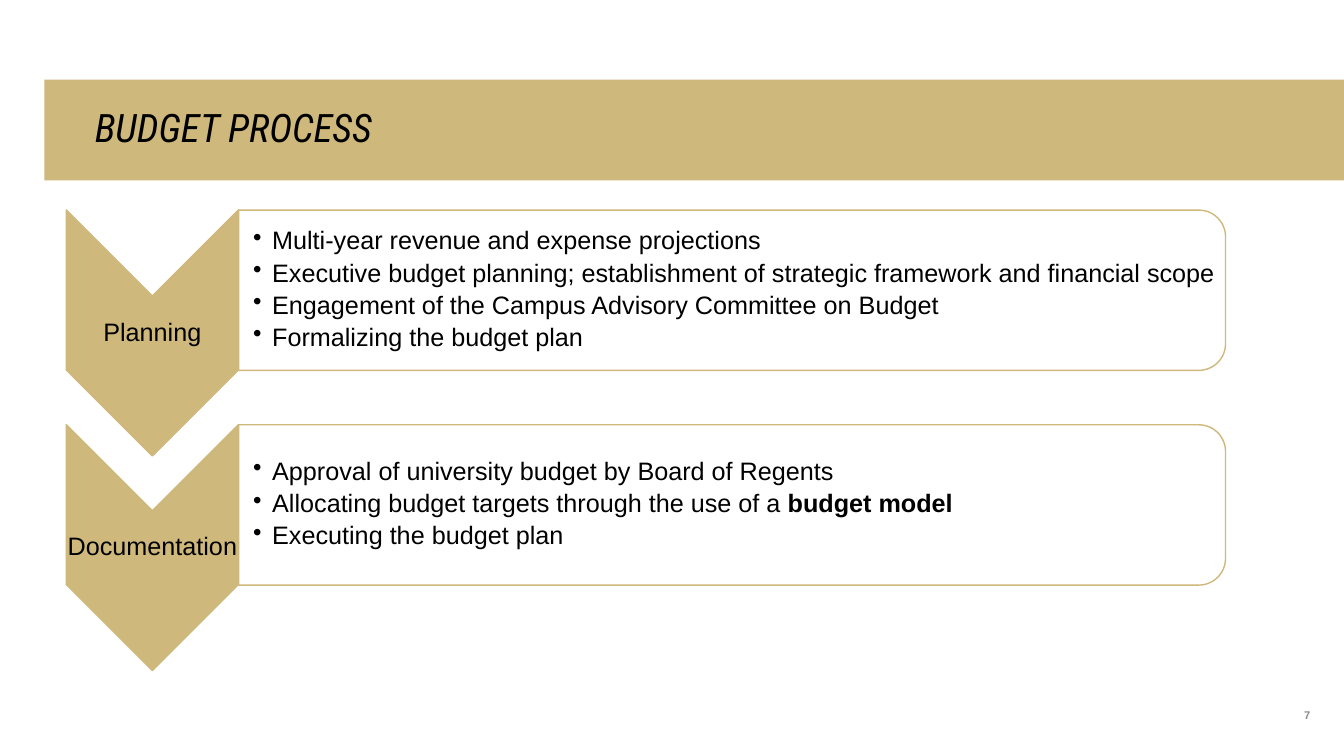
import pptx
import pptx.util
import pptx.dml.color
import pptx.enum.shapes
import pptx.enum.text
import pptx.oxml
import pptx.oxml.ns
from dataclasses import dataclass
from typing import Any
from pptx.util import Cm

Shape = pptx.enum.shapes.MSO_SHAPE
Align = pptx.enum.text.PP_ALIGN
Anchor = pptx.enum.text.MSO_ANCHOR
Color = pptx.dml.color.RGBColor
qn = pptx.oxml.ns.qn

GOLD = Color(0xCF, 0xB8, 0x7C)
WHITE = Color(0xFF, 0xFF, 0xFF)
BLACK = Color(0, 0, 0)
GRAY = Color(0x8C, 0x8C, 0x8C)
STEP = 5.41


@dataclass
class Run:
    text: str
    bold: bool = False


@dataclass
class Style:
    size: float = 18
    font: str = "Arial"
    color: Color = BLACK
    slant: bool = False


@dataclass
class Stage:
    label: str
    points: list[list[Run]]


BODY = Style()
STAGES = [
    Stage("Planning", [
        [Run("Multi-year revenue and expense projections")],
        [Run("Executive budget planning; establishment of strategic framework and financial scope")],
        [Run("Engagement of the Campus Advisory Committee on Budget")],
        [Run("Formalizing the budget plan")],
    ]),
    Stage("Documentation", [
        [Run("Approval of university budget by Board of Regents")],
        [Run("Allocating budget targets through the use of a "), Run("budget model", True)],
        [Run("Executing the budget plan")],
    ]),
]


def add_form(slide: Any, kind: Any, box: tuple, fill: Color, turn: int = 0) -> Any:
    form = slide.shapes.add_shape(kind, *map(Cm, box))
    form.shadow.inherit = False
    form.rotation = turn
    form.fill.solid()
    form.fill.fore_color.rgb = fill
    form.line.color.rgb = GOLD
    form.line.width = pptx.util.Pt(1)
    return form


def set_frame(shape: Any, pads: tuple, anchor: Any) -> Any:
    frame = shape.text_frame
    frame.word_wrap = True
    frame.vertical_anchor = anchor
    (frame.margin_left, frame.margin_top,
     frame.margin_right, frame.margin_bottom) = map(Cm, pads)
    return frame


def add_box(slide: Any, box: tuple, pads: tuple, anchor: Any = Anchor.MIDDLE) -> Any:
    return set_frame(slide.shapes.add_textbox(*map(Cm, box)), pads, anchor)


def write(para: Any, runs: list[Run], style: Style, align: Any = Align.LEFT) -> None:
    para.alignment = align
    para.line_spacing = 0.9
    for item in runs:
        run = para.add_run()
        run.text = item.text
        run.font.name = style.font
        run.font.size = pptx.util.Pt(style.size)
        run.font.color.rgb = style.color
        run.font.bold = item.bold
        run.font.italic = style.slant


def add_bullet(para: Any) -> None:
    props = para._p.get_or_add_pPr()
    props.set("marL", str(Cm(0.48)))
    props.set("indent", str(-Cm(0.48)))
    mark = props.makeelement(qn("a:buChar"), {"char": "•"})
    props.append(mark)


def fade(form: Any, share: int) -> None:
    tint = form._element.spPr.find(qn("a:solidFill"))[0]
    tint.append(tint.makeelement(qn("a:alpha"), {"val": str(share * 1000)}))


def add_stage(slide: Any, stage: Stage, drop: float) -> None:
    add_form(slide, Shape.CHEVRON, (0.74, 6.22 + drop, 6.2, 4.34), GOLD, 90)
    label = add_box(slide, (1.67, 7.47 + drop, 4.34, 1.85), (0.02,) * 4)
    write(label.paragraphs[0], [Run(stage.label)], BODY, Align.CENTER)

    panel = add_form(slide, Shape.ROUND_2_SAME_RECTANGLE,
                     (16.43, drop - 5.12, 4.04, 24.87), WHITE, 90)
    fade(panel, 90)
    frame = add_box(slide, (6.02, 5.49 + drop, 24.67, 3.63), (0.36, 0.03, 0.02, 0.03))
    for spot, runs in enumerate(stage.points):
        para = frame.add_paragraph() if spot else frame.paragraphs[0]
        add_bullet(para)
        para.space_after = pptx.util.Pt(3.5)
        write(para, runs, BODY)


def main() -> None:
    deck = pptx.Presentation()
    deck.slide_width, deck.slide_height = Cm(33.87), Cm(19.05)
    slide = deck.slides.add_slide(deck.slide_layouts[6])

    for spot, stage in enumerate(STAGES):
        add_stage(slide, stage, spot * STEP)

    band = add_form(slide, Shape.RECTANGLE, (1.12, 2.01, 32.75, 2.54), GOLD)
    band.line.fill.background()
    title = set_frame(band, (1.27, 0.13, 2.54, 0.13), Anchor.MIDDLE)
    write(title.paragraphs[0], [Run("BUDGET PROCESS")],
          Style(28, "Roboto Condensed", slant=True))

    number = add_box(slide, (30.86, 16.92, 2.16, 1.27), (0,) * 4, Anchor.BOTTOM)
    write(number.paragraphs[0], [Run("7", True)], Style(8, color=GRAY), Align.RIGHT)
    number.paragraphs[0].line_spacing = 1.0

    deck.save("out.pptx")


if __name__ == "__main__":
    main()
